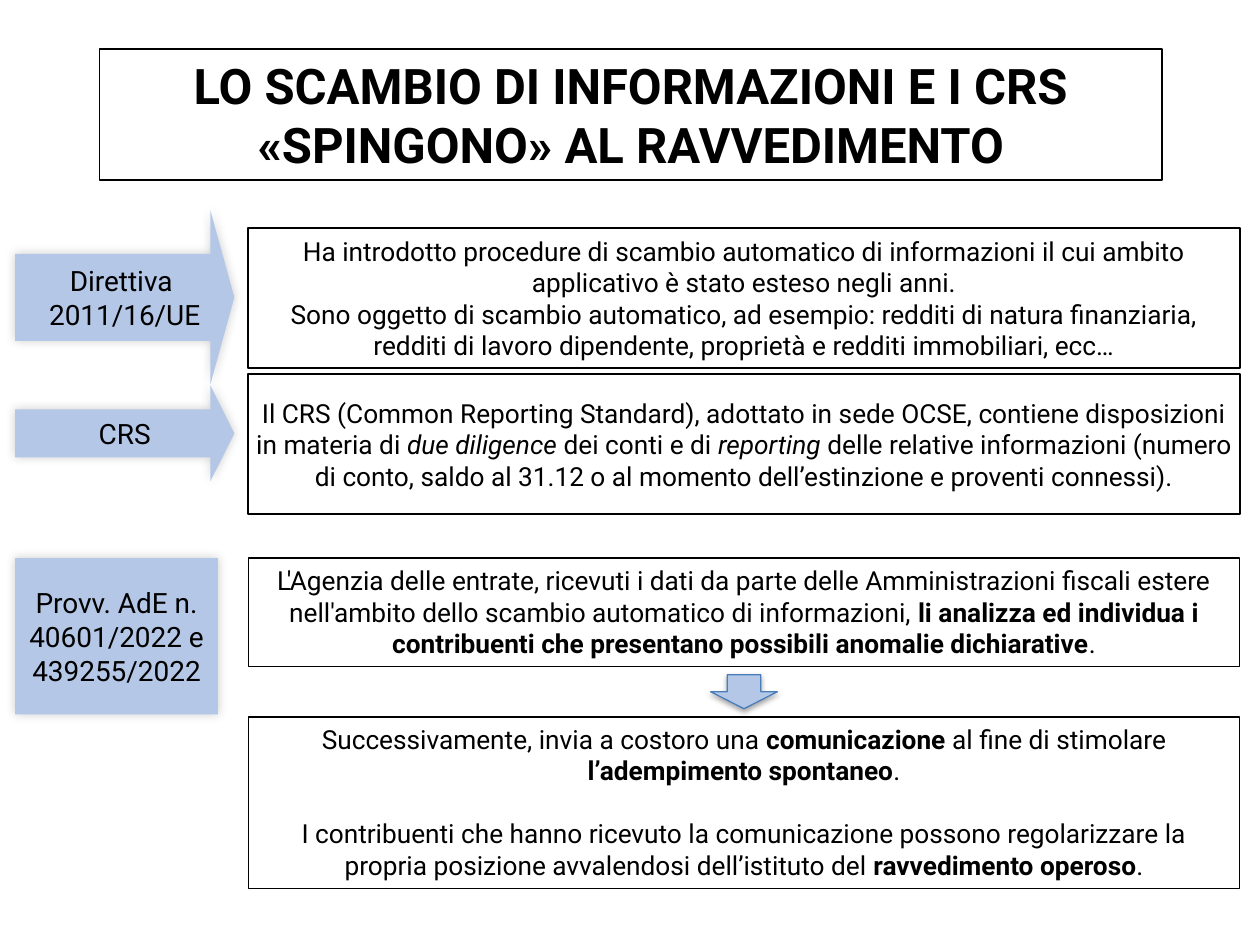
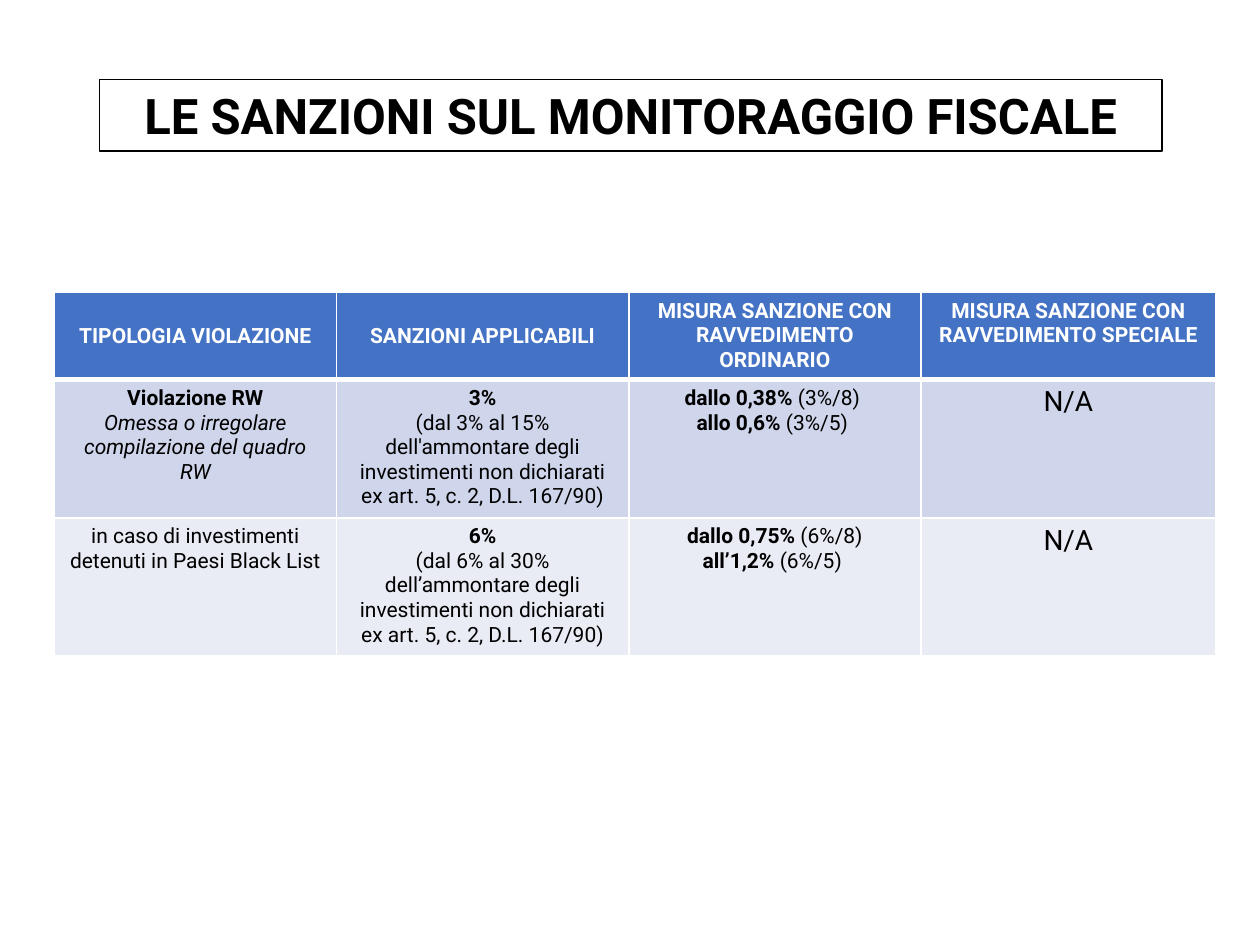
import pptx
import pptx.util
import pptx.dml.color
import pptx.enum.shapes
import pptx.enum.text
import pptx.oxml
import pptx.oxml.ns
from dataclasses import dataclass
from lxml import etree

Pt = pptx.util.Pt
SHAPE = pptx.enum.shapes.MSO_SHAPE
ANCHOR = pptx.enum.text.MSO_ANCHOR
qn = pptx.oxml.ns.qn


@dataclass(frozen=True)
class Theme:
    font: str = "Roboto"
    black: str = "000000"
    white: str = "FFFFFF"
    label_fill: str = "B4C7E7"
    arrow_line: str = "4A7EBB"
    head_fill: str = "4472C4"
    row_fills: tuple = ("CFD5EA", "E9EBF5")
    title: float = 28
    label: float = 16
    body: float = 15
    table: float = 12
    pad: float = 3.6


T = Theme()

# Content: a text is a list of paragraphs, a paragraph a list of (words, style)
# runs, where style holds "b" for bold and "i" for italic.
EXCHANGE_TITLE = "LO SCAMBIO DI INFORMAZIONI E I CRS «SPINGONO» AL RAVVEDIMENTO"
SANCTIONS_TITLE = "LE SANZIONI SUL MONITORAGGIO FISCALE"

DIRECTIVE = [
    [("Ha introdotto procedure di scambio automatico di informazioni il cui ambito "
      "applicativo è stato esteso negli anni.", "")],
    [("Sono oggetto di scambio automatico, ad esempio: redditi di natura finanziaria, "
      "redditi di lavoro dipendente, proprietà e redditi immobiliari, ecc…", "")],
]
CRS = [[
    ("Il CRS (Common Reporting Standard), adottato in sede OCSE, contiene disposizioni "
     "in materia di ", ""),
    ("due diligence", "i"), (" dei conti e di ", ""), ("reporting ", "i"),
    ("delle relative informazioni (numero di conto, saldo al 31.12 o al momento "
     "dell’estinzione e proventi connessi).", ""),
]]
ANALYSIS = [[
    ("L'Agenzia delle entrate, ricevuti i dati da parte delle Amministrazioni fiscali "
     "estere nell'ambito dello scambio automatico di informazioni, ", ""),
    ("li analizza ed individua i contribuenti che presentano possibili anomalie "
     "dichiarative", "b"), (".", ""),
]]
NOTICE = [
    [("Successivamente, invia a costoro una ", ""), ("comunicazione", "b"),
     (" al fine di stimolare ", ""), ("l’adempimento spontaneo", "b"), (".", "")],
    [("I contribuenti che hanno ricevuto la comunicazione possono regolarizzare la "
      "propria posizione avvalendosi dell’istituto del ", ""),
     ("ravvedimento operoso", "b"), (".", "")],
]
# top, height, line width, anchor, side inset, gap between paragraphs, text
BOXES = [
    (130.32, 79.92, 1, ANCHOR.MIDDLE, T.pad, 0, DIRECTIVE),
    (213.84, 79.92, 1, ANCHOR.MIDDLE, T.pad, 0, CRS),
    (318.96, 61.92, 0.75, ANCHOR.TOP, 2 * T.pad, 0, ANALYSIS),
    (409.68, 97.92, 0.75, ANCHOR.TOP, 2 * T.pad, 18, NOTICE),
]
BOX_LEFT, BOX_WIDTH = 141.84, 566.64

# top, height, text
LABEL_ARROWS = [
    (120.24, 99.36, [[("Direttiva ", "")], [("2011/16/UE", "")]]),
    (220.32, 54.72, [[("CRS", "")]]),
]
LABEL_LEFT, ARROW_WIDTH, ARROW_HEAD = 8.64, 125.28, 13.68
PROVISION = [[("Provv. AdE n. 40601/2022 e 439255/2022", "")]]

HEADERS = [
    ("TIPOLOGIA VIOLAZIONE", ANCHOR.MIDDLE),
    ("SANZIONI APPLICABILI", ANCHOR.MIDDLE),
    ("MISURA SANZIONE CON RAVVEDIMENTO ORDINARIO", ANCHOR.TOP),
    ("MISURA SANZIONE CON RAVVEDIMENTO SPECIALE", ANCHOR.TOP),
]
NOT_AVAILABLE = [[("N/A", "")]]
ROWS = [
    [
        [[("Violazione RW", "b")],
         [("Omessa o irregolare compilazione del quadro RW", "i")]],
        [[("3%", "b")],
         [("(dal 3% al 15% dell'ammontare degli investimenti non dichiarati "
           "ex art. 5, c. 2, D.L. 167/90)", "")]],
        [[("dallo 0,38% ", "b"), ("(3%/8) ", "")],
         [("allo 0,6%", "b"), (" (3%/5) ", "")]],
        NOT_AVAILABLE,
    ],
    [
        [[("in caso di investimenti detenuti in Paesi Black List", "")]],
        [[("6%", "b")],
         [("(dal 6% al 30% dell’ammontare degli investimenti non dichiarati "
           "ex art. 5, c. 2, D.L. 167/90)", "")]],
        [[("dallo 0,75% ", "b"), ("(6%/8)", "")],
         [("all’1,2% ", "b"), ("(6%/5) ", "")]],
        NOT_AVAILABLE,
    ],
]
COLUMN_WIDTHS = [161.28, 167.04, 167.04, 168.48]
ROW_HEIGHTS = [50, 79, 79]


def rgb(code):
    return pptx.dml.color.RGBColor.from_string(code)


def write(tf, paragraphs, size, color=T.black, gap=0):
    for i, runs in enumerate(paragraphs):
        p = tf.add_paragraph() if i else tf.paragraphs[0]
        p.alignment = pptx.enum.text.PP_ALIGN.CENTER
        p.space_before = Pt(gap if i else 0)
        for words, style in runs:
            r = p.add_run()
            r.text = words
            r.font.name, r.font.size = T.font, Pt(size)
            r.font.color.rgb = rgb(color)
            r.font.bold, r.font.italic = "b" in style, "i" in style


def frame(sp, anchor=ANCHOR.MIDDLE, left=T.pad, right=T.pad):
    tf = sp.text_frame
    tf.word_wrap = True
    tf.auto_size = pptx.enum.text.MSO_AUTO_SIZE.NONE
    tf.vertical_anchor = anchor
    tf.margin_left, tf.margin_right = Pt(left), Pt(right)
    tf.margin_top = tf.margin_bottom = Pt(T.pad)
    return tf


def paint(sp, fill, line=None, width=1):
    sp.fill.solid()
    sp.fill.fore_color.rgb = rgb(fill)
    if line:
        sp.line.color.rgb = rgb(line)
        sp.line.width = Pt(width)
    else:
        sp.line.fill.background()


def add_shape(s, kind, left, top, width, height, fill, line=None, line_width=1):
    sp = s.shapes.add_shape(kind, Pt(left), Pt(top), Pt(width), Pt(height))
    paint(sp, fill, line, line_width)
    sp.shadow.inherit = False
    return sp


def cast_shadow(sp, alpha, blur, dist, angle):
    effects = sp._element.spPr.find(qn("a:effectLst"))
    shadow = etree.SubElement(
        effects, qn("a:outerShdw"), blurRad=str(Pt(blur)), dist=str(Pt(dist)),
        dir=str(angle * 60000), rotWithShape="0")
    color = etree.SubElement(shadow, qn("a:srgbClr"), val=T.black)
    etree.SubElement(color, qn("a:alpha"), val=str(alpha * 1000))


def add_titled_slide(prs, title, top, height):
    s = prs.slides.add_slide(prs.slide_layouts[5])
    sp = s.shapes.title
    sp.left, sp.top, sp.width, sp.height = Pt(56.88), Pt(top), Pt(606.96), Pt(height)
    paint(sp, T.white, T.black)
    write(frame(sp), [[(title, "b")]], T.title)
    return s


def add_label(s, kind, top, width, height, text, left_inset=T.pad):
    sp = add_shape(s, kind, LABEL_LEFT, top, width, height, T.label_fill)
    cast_shadow(sp, 20, 6, 0, 225)
    write(frame(sp, left=left_inset), text, T.label)
    return sp


def build_exchange(prs):
    s = add_titled_slide(prs, EXCHANGE_TITLE, 28.08, 74.88)
    for top, height, line_width, anchor, inset, gap, text in BOXES:
        sp = add_shape(s, SHAPE.RECTANGLE, BOX_LEFT, top, BOX_WIDTH, height,
                       T.white, T.black, line_width)
        write(frame(sp, anchor, inset, inset), text, T.body, gap=gap)
    for top, height, text in LABEL_ARROWS:
        sp = add_label(s, SHAPE.RIGHT_ARROW, top, ARROW_WIDTH, height, text,
                       left_inset=T.pad + ARROW_HEAD / 2)
        sp.adjustments[0] = 0.5
        sp.adjustments[1] = ARROW_HEAD / height
    add_label(s, SHAPE.RECTANGLE, BOXES[2][0], 115.92, 89.28, PROVISION)

    width, height = 38.16, 19.44
    between = (BOXES[2][0] + BOXES[2][1] + BOXES[3][0]) / 2
    arrow = add_shape(s, SHAPE.DOWN_ARROW, BOX_LEFT + (BOX_WIDTH - width) / 2,
                      between - height / 2, width, height,
                      T.label_fill, T.arrow_line, 0.75)
    cast_shadow(arrow, 35, 3, 1.8, 90)


def set_cell(cell, text, size, color, fill, anchor, top_line, bottom_line):
    tcPr = cell._tc.get_or_add_tcPr()
    for side, width in zip("LRTB", (1, 1, top_line, bottom_line)):
        line = etree.SubElement(tcPr, qn(f"a:ln{side}"), w=str(Pt(width)))
        solid = etree.SubElement(line, qn("a:solidFill"))
        etree.SubElement(solid, qn("a:srgbClr"), val=T.white)
    cell.fill.solid()
    cell.fill.fore_color.rgb = rgb(fill)
    cell.vertical_anchor = anchor
    write(cell.text_frame, text, size, color)


def build_sanctions(prs):
    s = add_titled_slide(prs, SANCTIONS_TITLE, 45.36, 41.04)
    table = s.shapes.add_table(
        len(ROW_HEIGHTS), len(COLUMN_WIDTHS), Pt(31), Pt(167),
        Pt(sum(COLUMN_WIDTHS)), Pt(sum(ROW_HEIGHTS))).table
    table.horz_banding = False
    for column, width in zip(table.columns, COLUMN_WIDTHS):
        column.width = Pt(width)
    for row, height in zip(table.rows, ROW_HEIGHTS):
        row.height = Pt(height)
    for c, (words, anchor) in enumerate(HEADERS):
        set_cell(table.cell(0, c), [[(words, "b")]], T.table, T.white,
                 T.head_fill, anchor, 1, 3)
    for r, (texts, fill) in enumerate(zip(ROWS, T.row_fills), start=1):
        for c, text in enumerate(texts):
            size = T.label if text is NOT_AVAILABLE else T.table
            set_cell(table.cell(r, c), text, size, T.black, fill, ANCHOR.TOP,
                     3 if r == 1 else 1, 1)


def main():
    prs = pptx.Presentation()
    prs.slide_width, prs.slide_height = Pt(720), Pt(540)
    build_exchange(prs)
    build_sanctions(prs)
    prs.save("out.pptx")


if __name__ == "__main__":
    main()
